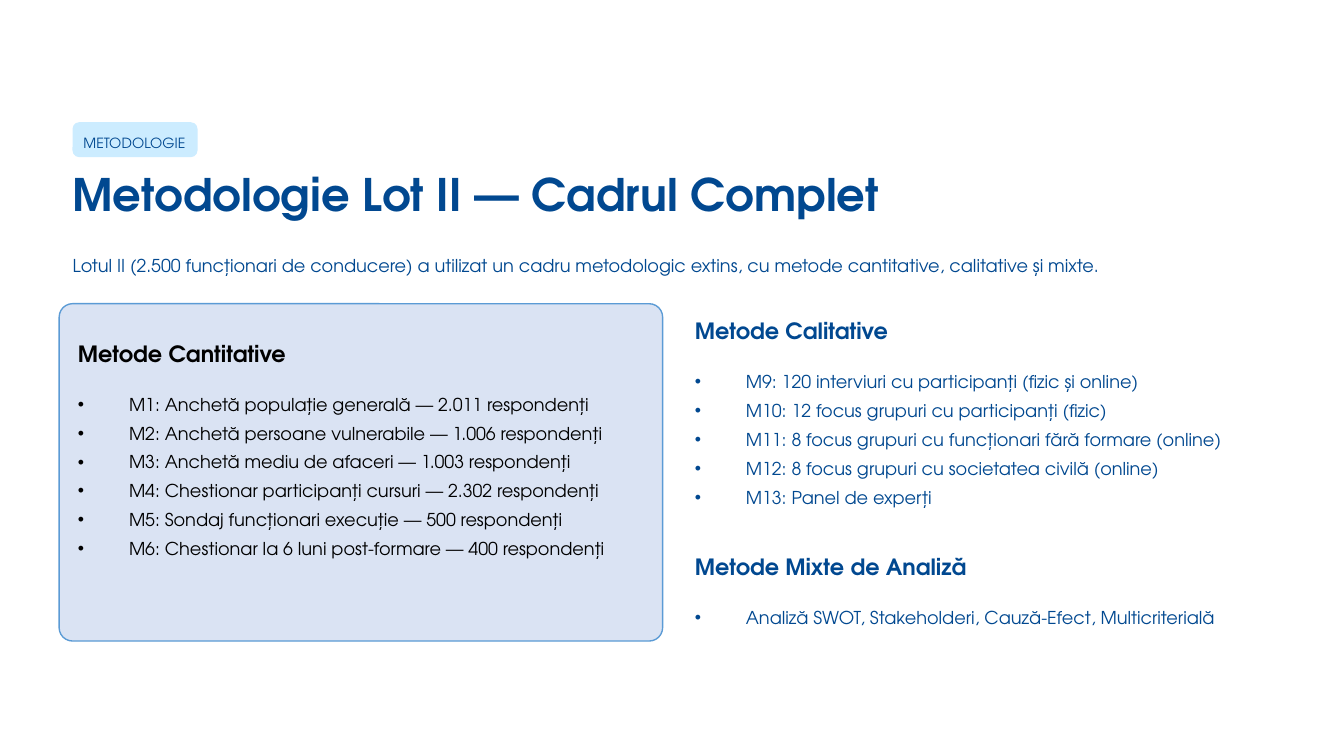
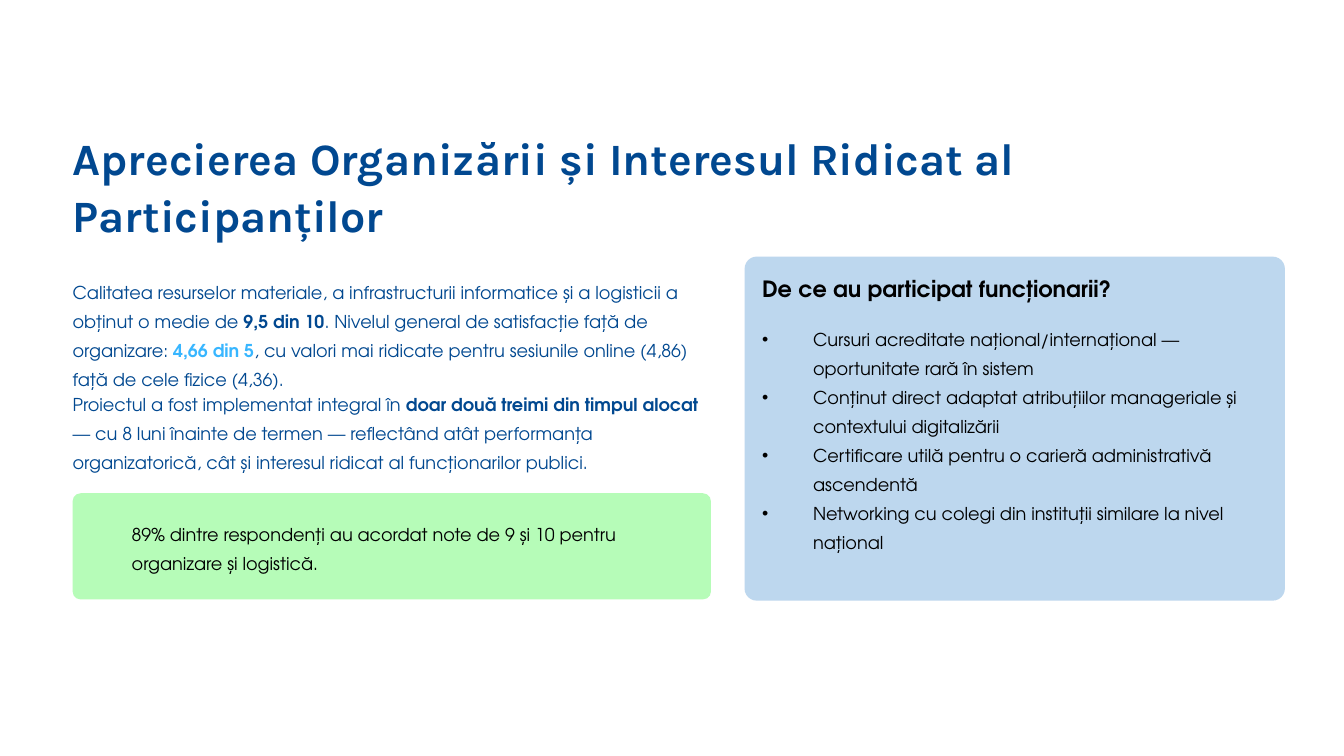
"""Builds two slides on the evaluation methodology and on how participants rated the courses."""
from lxml.etree import SubElement
from pptx import Presentation
from pptx.dml.color import RGBColor
from pptx.enum.shapes import MSO_SHAPE
from pptx.oxml.ns import qn
from pptx.util import Inches, Pt

NAVY, SKY, BLACK = "014890", "38B6FF", "000000"
BODY_FONT, ALT_FONT = "TeX Gyre Adventor", "Karla"
SLIDE_WIDTH = 10
LEFT, LIST_DROP, BULLET_INDENT = 0.54, 0.35, 0.38

STYLES = {
    "tag": (7.5, 12.5, False),
    "title": (24, 30.5, True),
    "heading": (12, 15, True),
    "body": (9.5, 15.5, False),
}

METHODS = {
    "tag": "METODOLOGIE",
    "title": "Metodologie Lot II — Cadrul Complet",
    "intro": "Lotul II (2.500 funcționari de conducere) a utilizat un cadru metodologic extins, "
             "cu metode cantitative, calitative și mixte.",
    "groups": [
        ("Metode Cantitative", (0.58, 2.52, 4.22), BLACK, [
            "M1: Anchetă populație generală — 2.011 respondenți",
            "M2: Anchetă persoane vulnerabile — 1.006 respondenți",
            "M3: Anchetă mediu de afaceri — 1.003 respondenți",
            "M4: Chestionar participanți cursuri — 2.302 respondenți",
            "M5: Sondaj funcționari execuție — 500 respondenți",
            "M6: Chestionar la 6 luni post-formare — 400 respondenți",
        ]),
        ("Metode Calitative", (5.17, 2.35, 4.29), NAVY, [
            "M9: 120 interviuri cu participanți (fizic și online)",
            "M10: 12 focus grupuri cu participanți (fizic)",
            "M11: 8 focus grupuri cu funcționari fără formare (online)",
            "M12: 8 focus grupuri cu societatea civilă (online)",
            "M13: Panel de experți",
        ]),
        ("Metode Mixte de Analiză", (5.17, 4.11, 4.29), NAVY, [
            "Analiză SWOT, Stakeholderi, Cauză-Efect, Multicriterială",
        ]),
    ],
}

APPRECIATION = {
    "title": "Aprecierea Organizării și Interesul Ridicat al Participanților",
    "quality": [
        "Calitatea resurselor materiale, a infrastructurii informatice și a logisticii a obținut "
        "o medie de ",
        ("9,5 din 10", NAVY),
        ". Nivelul general de satisfacție față de organizare: ",
        ("4,66 din 5", SKY),
        ", cu valori mai ridicate pentru sesiunile online (4,86) față de cele fizice (4,36).",
    ],
    "timing": [
        "Proiectul a fost implementat integral în ",
        ("doar două treimi din timpul alocat", NAVY),
        " — cu 8 luni înainte de termen — reflectând atât performanța organizatorică, "
        "cât și interesul ridicat al funcționarilor publici.",
    ],
    "score": "89% dintre respondenți au acordat note de 9 și 10 pentru organizare și logistică.",
    "reasons": ("De ce au participat funcționarii?", (5.67, 2.04, 3.75), BLACK, [
        "Cursuri acreditate național/internațional — oportunitate rară în sistem",
        "Conținut direct adaptat atribuțiilor manageriale și contextului digitalizării",
        "Certificare utilă pentru o carieră administrativă ascendentă",
        "Networking cu colegi din instituții similare la nivel național",
    ]),
}


def color(code):
    return RGBColor.from_string(code)


def add_panel(slide, box, fill, radius, line=None):
    panel = slide.shapes.add_shape(MSO_SHAPE.ROUNDED_RECTANGLE, *map(Inches, box))
    panel.adjustments[0] = radius / min(box[2:])
    panel.shadow.inherit = False
    panel.fill.solid()
    panel.fill.fore_color.rgb = color(fill)
    if line:
        panel.line.color.rgb = color(line)
        panel.line.width = Pt(0.75)
    else:
        panel.line.fill.background()


def add_bullet(paragraph):
    properties = paragraph._p.get_or_add_pPr()
    properties.set("marL", str(Inches(BULLET_INDENT)))
    properties.set("indent", str(-Inches(BULLET_INDENT)))
    SubElement(properties, qn("a:buFont")).set("typeface", "Arial")
    SubElement(properties, qn("a:buChar")).set("char", "•")


def add_text(slide, box, paragraphs, style="body", ink=NAVY, font=BODY_FONT,
             bullets=False, wrap=True):
    size, spacing, bold = STYLES[style]
    frame = slide.shapes.add_textbox(*map(Inches, box)).text_frame
    frame.word_wrap = wrap
    frame.margin_left = frame.margin_right = frame.margin_top = frame.margin_bottom = 0
    for index, content in enumerate(paragraphs):
        paragraph = frame.add_paragraph() if index else frame.paragraphs[0]
        if bullets:
            add_bullet(paragraph)
        paragraph.line_spacing = Pt(spacing)
        paragraph.font.name = font
        paragraph.font.size = Pt(size)
        paragraph.font.bold = bold
        paragraph.font.color.rgb = color(ink)
        for part in [content] if isinstance(content, str) else content:
            run = paragraph.add_run()
            if isinstance(part, str):
                run.text = part
            else:
                run.text, accent = part
                run.font.bold = True
                run.font.color.rgb = color(accent)


def add_group(slide, heading, place, ink, items):
    left, top, width = place
    add_text(slide, (left, top, width, 0.21), [heading], "heading", ink, wrap=False)
    add_text(slide, (left, top + LIST_DROP, width, 0.25 * len(items)), items, ink=ink,
             bullets=True)


def build_methods(slide):
    add_panel(slide, (LEFT, 0.91, 0.93, 0.26), "CCECFF", 0.05)
    add_text(slide, (0.62, 0.95, 0.77, 0.17), [METHODS["tag"]], "tag", wrap=False)
    add_text(slide, (LEFT, 1.22, 6.2, 0.42), [METHODS["title"]], "title", wrap=False)
    add_text(slide, (LEFT, 1.84, 8.91, 0.22), [METHODS["intro"]], wrap=False)
    add_panel(slide, (0.44, 2.26, 4.49, 2.51), "DAE3F3", 0.1, line="5B9BD5")
    for group in METHODS["groups"]:
        add_group(slide, *group)


def build_appreciation(slide):
    column = 4.75
    add_text(slide, (LEFT, 0.95, 8.91, 0.85), [APPRECIATION["title"]], "title", font=ALT_FONT)
    add_text(slide, (LEFT, 2.04, column, 0.87), [APPRECIATION["quality"]])
    add_text(slide, (LEFT, 2.87, column, 0.65), [APPRECIATION["timing"]])
    add_panel(slide, (LEFT, 3.67, column, 0.79), "B6FCB8", 0.06)
    add_text(slide, (0.98, 3.84, 4.18, 0.43), [APPRECIATION["score"]], ink=BLACK)
    add_panel(slide, (5.54, 1.91, 4.02, 2.56), "BDD7EE", 0.09)
    add_group(slide, *APPRECIATION["reasons"])


def main():
    deck = Presentation()
    deck.slide_width = Inches(SLIDE_WIDTH)
    deck.slide_height = Inches(SLIDE_WIDTH * 9 / 16)
    for build in (build_methods, build_appreciation):
        build(deck.slides.add_slide(deck.slide_layouts[6]))
    deck.save("out.pptx")


if __name__ == "__main__":
    main()
